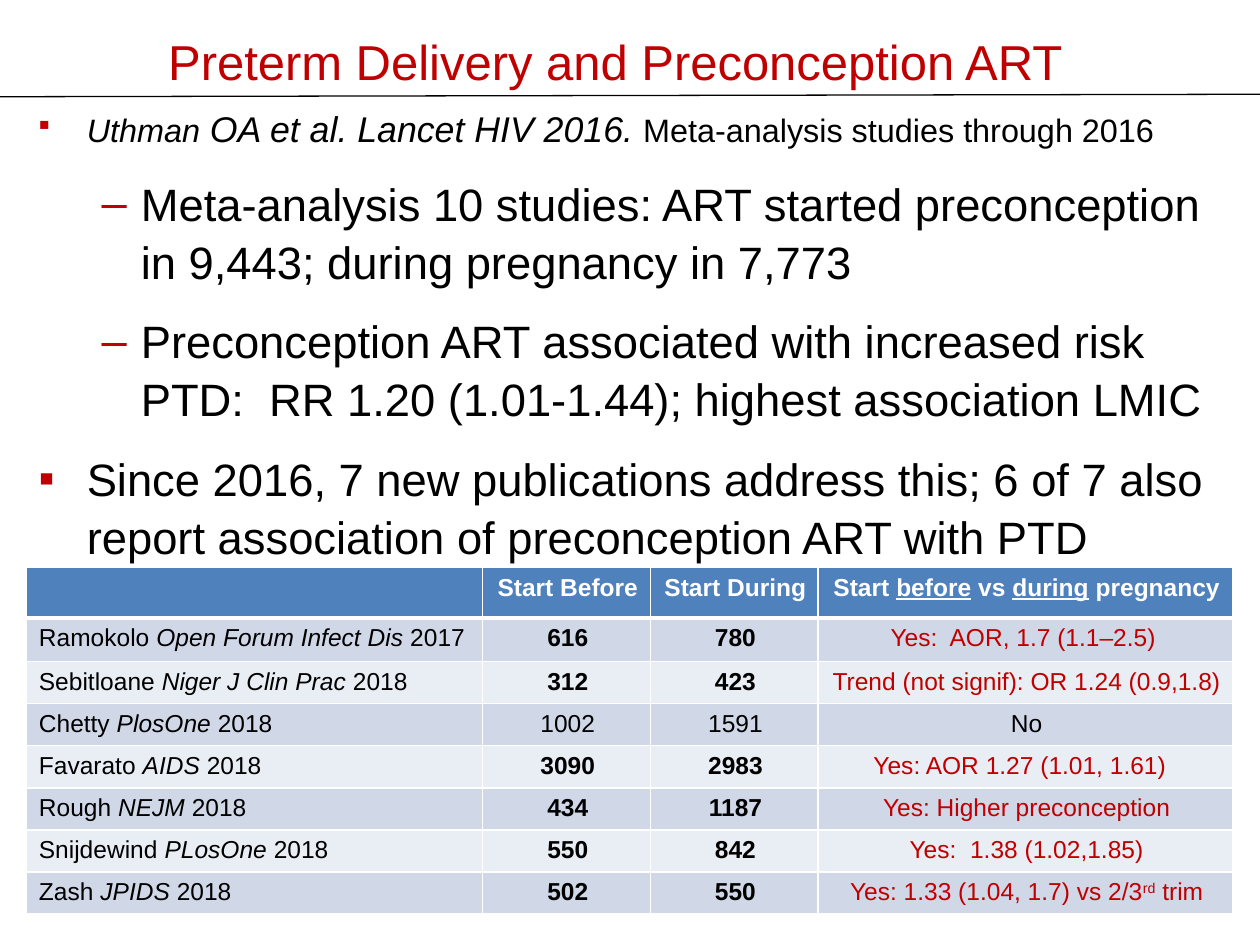
"""Build a slide on preterm delivery and preconception ART with a study table."""
import pptx
import pptx.dml.color
import pptx.enum.shapes
import pptx.enum.text
import pptx.oxml.ns
import pptx.util
from lxml import etree

Cm = pptx.util.Cm
Pt = pptx.util.Pt
ALIGN = pptx.enum.text.PP_ALIGN
ANCHOR = pptx.enum.text.MSO_ANCHOR

COLORS = {
    "red": "C00000", "black": "000000", "white": "FFFFFF",
    "header": "4F81BD", "odd": "D0D8E8", "even": "E9EDF4",
}
BODY_SIZE = 25.9
COLUMN_WIDTHS = [9.2, 3.38, 3.38, 8.36]
ROW_HEIGHTS = [0.81, 0.88] + [0.81] * 6

BODY = [
    (0, 6, 6, [("Uthman", {"size": 18.5, "italic": True}),
               (" OA et al. Lancet HIV 2016. ", {"size": 20.4, "italic": True}),
               ("Meta-analysis studies through 2016", {"size": 18.5}),
               (" ", {})]),
    (1, 6, 6, [("Meta-analysis 10 studies: ART started preconception in 9,443; "
                "during pregnancy in 7,773", {})]),
    (1, 6, 0, [("Preconception ART associated with increased risk PTD:  "
                "RR 1.20 (1.01-1.44); highest association LMIC", {})]),
    (0, 12, 0, [("Since 2016, 7 new publications address this; 6 of 7 also "
                 "report association of preconception ART with PTD", {})]),
]
LEVELS = [("▪", 0.97, -0.97), ("–", 2.06, -0.79)]

HEADER = [
    [], [("Start Before", {})], [("Start During", {})],
    [("Start ", {}), ("before", {"underline": True}), (" vs ", {}),
     ("during", {"underline": True}), (" pregnancy", {})],
]
STUDIES = [
    ("Ramokolo ", "Open Forum Infect Dis", "616", "780", [("Yes:  AOR, 1.7 (1.1–2.5) ", {})]),
    ("Sebitloane ", "Niger J Clin Prac", "312", "423",
     [("Trend (not signif): OR 1.24 (0.9,1.8)", {})]),
    ("Chetty ", "PlosOne", "1002", "1591", [("No", {})]),
    ("Favarato ", "AIDS", "3090", "2983", [("Yes: AOR 1.27 (1.01, 1.61)  ", {})]),
    ("Rough ", "NEJM", "434", "1187", [("Yes: Higher preconception", {})]),
    ("Snijdewind ", "PLosOne", "550", "842", [("Yes:  1.38 (1.02,1.85)", {})]),
    ("Zash ", "JPIDS", "502", "550",
     [("Yes: 1.33 (1.04, 1.7) vs 2/3", {}), ("rd", {"baseline": 30000}), (" trim", {})]),
]
YEARS = [2017] + [2018] * 6


def rgb(name):
    """Return the named colour."""
    return pptx.dml.color.RGBColor.from_string(COLORS[name])


def add_run(paragraph, text, size=14, color="black", bold=False, italic=False,
            underline=False, baseline=None):
    """Append formatted text to a paragraph."""
    run = paragraph.add_run()
    run.text = text
    font = run.font
    font.name, font.size, font.color.rgb = "Arial", Pt(size), rgb(color)
    font.bold, font.italic, font.underline = bold, italic, underline
    if baseline:
        font._element.set("baseline", str(baseline))


def add_text_box(slide, left, top, width, height, anchor):
    """Add a wrapping text box and return its text frame."""
    frame = slide.shapes.add_textbox(Cm(left), Cm(top), Cm(width), Cm(height)).text_frame
    frame.word_wrap = True
    frame.vertical_anchor = anchor
    return frame


def add_child(parent, tag, **attributes):
    """Add a DrawingML child element."""
    return etree.SubElement(parent, pptx.oxml.ns.qn(tag), attributes)


def set_bullet(paragraph, character, indent, hanging):
    """Give a paragraph a red bullet and a hanging indent."""
    properties = paragraph._p.get_or_add_pPr()
    properties.set("marL", str(Cm(indent)))
    properties.set("indent", str(Cm(hanging)))
    add_child(add_child(properties, "a:buClr"), "a:srgbClr", val=COLORS["red"])
    add_child(properties, "a:buFont", typeface="Arial")
    add_child(properties, "a:buChar", char=character)


def add_title(slide):
    """Add the centred slide title."""
    frame = add_text_box(slide, 0.97, -0.36, 22.86, 3.18, ANCHOR.MIDDLE)
    paragraph = frame.paragraphs[0]
    paragraph.alignment = ALIGN.CENTER
    add_run(paragraph, "Preterm Delivery and Preconception ART", size=28, color="red")


def add_body(slide):
    """Add the bulleted text."""
    frame = add_text_box(slide, 0.53, 1.75, 24.33, 9.88, ANCHOR.TOP)
    for index, (level, before, after, runs) in enumerate(BODY):
        paragraph = frame.add_paragraph() if index else frame.paragraphs[0]
        paragraph.level = level
        paragraph.line_spacing = 1.07
        paragraph.space_before, paragraph.space_after = Pt(before), Pt(after)
        set_bullet(paragraph, *LEVELS[level])
        for text, style in runs:
            add_run(paragraph, text, **{"size": BODY_SIZE, **style})


def fill_cell(cell, runs, fill, centered=True, bottom=1, **style):
    """Write a table cell with white borders and a solid fill."""
    properties = cell._tc.get_or_add_tcPr()
    for side, width in (("L", 1), ("R", 1), ("T", 1), ("B", bottom)):
        line = add_child(properties, f"a:ln{side}", w=str(Pt(width)))
        add_child(add_child(line, "a:solidFill"), "a:srgbClr", val=COLORS["white"])
    cell.fill.solid()
    cell.fill.fore_color.rgb = rgb(fill)
    cell.margin_right = Cm(0.2)
    paragraph = cell.text_frame.paragraphs[0]
    paragraph.alignment = ALIGN.CENTER if centered else ALIGN.LEFT
    for text, extra in runs:
        add_run(paragraph, text, **{**style, **extra})


def add_study_table(slide):
    """Add the table of studies."""
    table = slide.shapes.add_table(
        len(ROW_HEIGHTS), len(COLUMN_WIDTHS), Cm(0.53), Cm(11.44),
        Cm(sum(COLUMN_WIDTHS)), Cm(sum(ROW_HEIGHTS))).table
    for column, width in zip(table.columns, COLUMN_WIDTHS):
        column.width = Cm(width)
    for row, height in zip(table.rows, ROW_HEIGHTS):
        row.height = Cm(height)
    for column, runs in enumerate(HEADER):
        fill_cell(table.cell(0, column), runs, "header", bottom=3, color="white", bold=True)
    for row, (study, year) in enumerate(zip(STUDIES, YEARS), start=1):
        author, journal, before, during, finding = study
        fill = "odd" if row % 2 else "even"
        associated = finding[0][0] != "No"
        citation = [(author, {}), (journal, {"italic": True}), (f" {year}", {})]
        fill_cell(table.cell(row, 0), citation, fill, centered=False)
        for column, count in enumerate((before, during), start=1):
            fill_cell(table.cell(row, column), [(count, {})], fill, bold=associated)
        fill_cell(table.cell(row, 3), finding, fill, color="red" if associated else "black")


def add_rule(slide):
    """Add the thin line under the title."""
    line = slide.shapes.add_connector(
        pptx.enum.shapes.MSO_CONNECTOR.STRAIGHT, Cm(0), Cm(1.95), Cm(25.4), Cm(1.9))
    line.line.color.rgb = rgb("black")
    line.line.width = Pt(0.75)
    add_child(line._element.spPr, "a:effectLst")


def main():
    """Build and save the presentation."""
    presentation = pptx.Presentation()
    presentation.slide_width, presentation.slide_height = Cm(25.4), Cm(19.05)
    slide = presentation.slides.add_slide(presentation.slide_layouts[6])
    add_title(slide)
    add_body(slide)
    add_study_table(slide)
    add_rule(slide)
    presentation.save("out.pptx")


if __name__ == "__main__":
    main()
